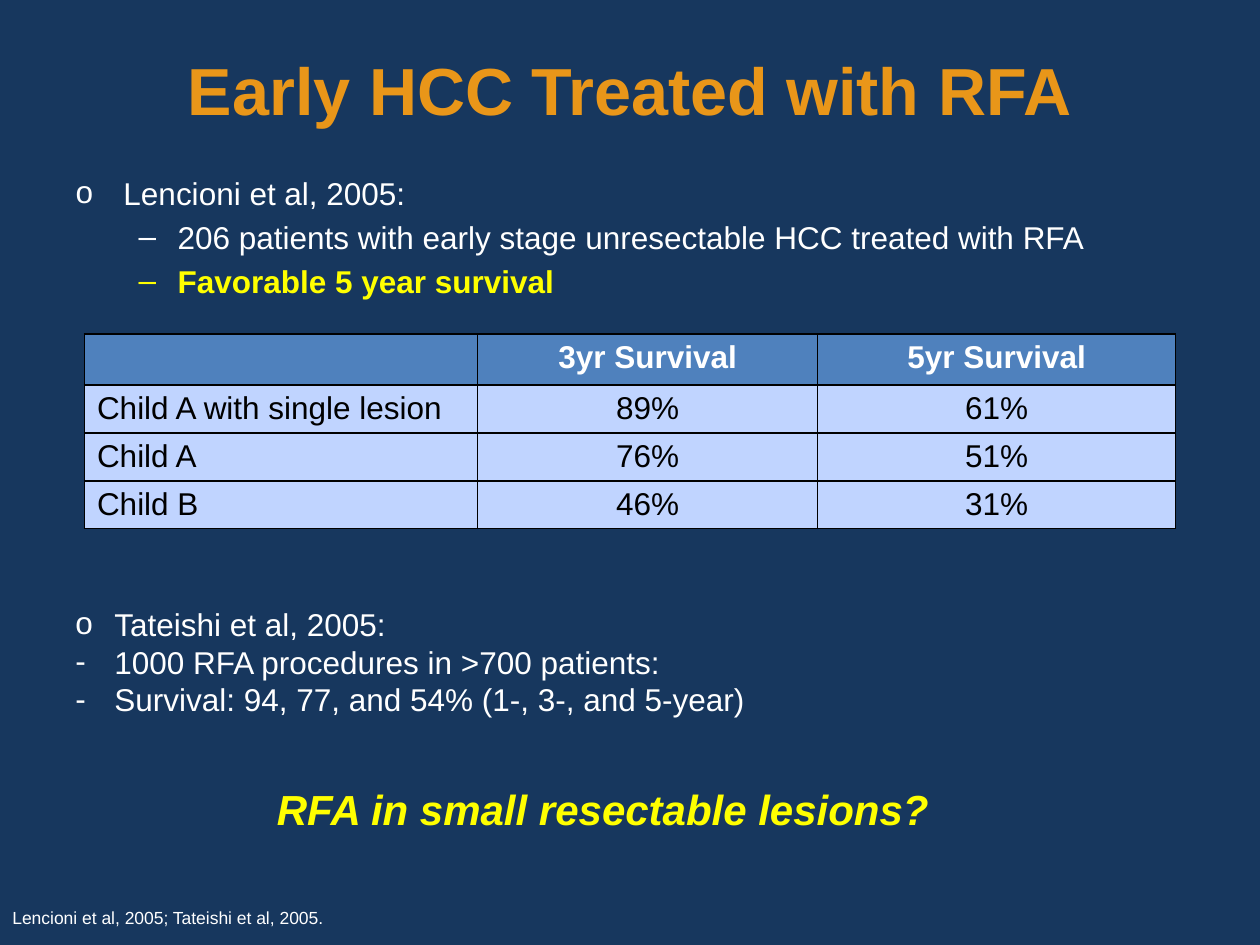
from dataclasses import dataclass

from lxml import etree
from pptx import Presentation
from pptx.dml.color import RGBColor
from pptx.enum.text import MSO_ANCHOR, MSO_AUTO_SIZE, PP_ALIGN
from pptx.oxml.ns import qn
from pptx.util import Inches, Pt

LEFT, CENTER = PP_ALIGN.LEFT, PP_ALIGN.CENTER
MIDDLE = MSO_ANCHOR.MIDDLE
FIXED = MSO_AUTO_SIZE.NONE
WIDE, HIGH = 10, 7.5
EDGE = 0.05 * WIDE


@dataclass(frozen=True)
class Theme:
    font: str = "Arial"
    back: str = "17375E"
    title: str = "E99619"
    text: str = "FFFFFF"
    accent: str = "FFFF00"
    head: str = "4F81BD"
    cell: str = "C0D4FF"
    ink: str = "000000"
    big: int = 38
    mid: int = 24
    base: int = 18
    small: int = 10


THEME = Theme()

STUDY = [
    ("Lencioni et al, 2005:", "o", 0),
    ("206 patients with early stage unresectable HCC treated with RFA", "–", 1),
    ("Favorable 5 year survival", "–", 1),
]
SERIES = [
    ("Tateishi et al, 2005:", "o"),
    ("1000 RFA procedures in >700 patients:", "-"),
    ("Survival: 94, 77, and 54% (1-, 3-, and 5-year)", "-"),
]
RATES = [
    ("", "3yr Survival", "5yr Survival"),
    ("Child A with single lesion", "89%", "61%"),
    ("Child A", "76%", "51%"),
    ("Child B", "46%", "31%"),
]


def paint(fill, color):
    fill.solid()
    fill.fore_color.rgb = RGBColor.from_string(color)


def style(para, size, color, bold=False, italic=False, align=LEFT):
    para.alignment = align
    for run in para.runs:
        font = run.font
        font.name, font.size = THEME.font, Pt(size)
        font.bold, font.italic = bold, italic
        font.color.rgb = RGBColor.from_string(color)


def bullet(para, mark, left, hang):
    """Give the paragraph a bullet that hangs to the left of its text."""
    props = para._p.get_or_add_pPr()
    props.set("marL", str(Inches(left)))
    props.set("indent", str(-Inches(hang)))
    etree.SubElement(props, qn("a:buFont"), typeface=THEME.font)
    etree.SubElement(props, qn("a:buChar"), char=mark)


def place(shape, left, top, width, height):
    shape.left, shape.top = Inches(left), Inches(top)
    shape.width, shape.height = Inches(width), Inches(height)


def add_title(slide, text):
    shape = slide.shapes.title
    place(shape, EDGE, 0.08, WIDE - 2 * EDGE, 1.25)
    frame = shape.text_frame
    frame.text = text
    frame.auto_size, frame.vertical_anchor = FIXED, MIDDLE
    style(frame.paragraphs[0], THEME.big, THEME.title, bold=True, align=CENTER)


def add_study(slide):
    shape = slide.placeholders[1]
    place(shape, EDGE, 1.33, WIDE - 2 * EDGE, 1.67)
    frame = shape.text_frame
    frame.text = "\n".join(text for text, _, _ in STUDY)
    frame.auto_size = FIXED
    for para, (_, mark, level) in zip(frame.paragraphs, STUDY):
        para.level = level
        style(para, THEME.base, THEME.text)
        bullet(para, mark, *((0.81, 0.31) if level else (0.38, 0.38)))
    style(frame.paragraphs[-1], THEME.base, THEME.accent, bold=True)


def add_text(slide, text, box, size, color, wrap=False, **look):
    shape = slide.shapes.add_textbox(*map(Inches, box))
    frame = shape.text_frame
    frame.text = text
    frame.word_wrap = wrap
    for para in frame.paragraphs:
        style(para, size, color, **look)
    return frame


def add_series(slide):
    text = "\n".join(line for line, _ in SERIES)
    box = (EDGE, 4.75, 8.83, 1.01)
    frame = add_text(slide, text, box, THEME.base, THEME.text, wrap=True)
    for para, (_, mark) in zip(frame.paragraphs, SERIES):
        bullet(para, mark, 0.31, 0.31)


def frame_cell(cell):
    """Draw a thin line on all four sides of the cell; call before its fill."""
    props = cell._tc.get_or_add_tcPr()
    for side in ("lnL", "lnR", "lnT", "lnB"):
        line = etree.SubElement(props, qn(f"a:{side}"), w=str(Pt(1)))
        fill = etree.SubElement(line, qn("a:solidFill"))
        etree.SubElement(fill, qn("a:srgbClr"), val=THEME.ink)


def add_rates(slide):
    widths, high = (3.12, 2.7, 2.84), 0.38
    box = (0.67, 2.65, sum(widths), high * len(RATES))
    table = slide.shapes.add_table(
        len(RATES), len(widths), *map(Inches, box)).table
    for col, width in zip(table.columns, widths):
        col.width = Inches(width)
    for r, row in enumerate(RATES):
        head = r == 0
        for c, text in enumerate(row):
            cell = table.cell(r, c)
            cell.text = text
            frame_cell(cell)
            paint(cell.fill, THEME.head if head else THEME.cell)
            style(cell.text_frame.paragraphs[0], THEME.base,
                  THEME.text if head else THEME.ink, bold=head,
                  align=CENTER if c else LEFT)


def main():
    deck = Presentation()
    deck.slide_width, deck.slide_height = Inches(WIDE), Inches(HIGH)
    slide = deck.slides.add_slide(deck.slide_layouts[1])
    paint(slide.background.fill, THEME.back)
    add_title(slide, "Early HCC Treated with RFA")
    add_study(slide)
    add_rates(slide)
    add_series(slide)
    add_text(slide, "RFA in small resectable lesions?", (2.03, 6.17, 5.51, 0.5),
             THEME.mid, THEME.accent, bold=True, italic=True, align=CENTER)
    add_text(slide, "Lencioni et al, 2005; Tateishi et al, 2005.",
             (0, 7.15, 2.7, 0.27), THEME.small, THEME.text)
    deck.save("out.pptx")


if __name__ == "__main__":
    main()
